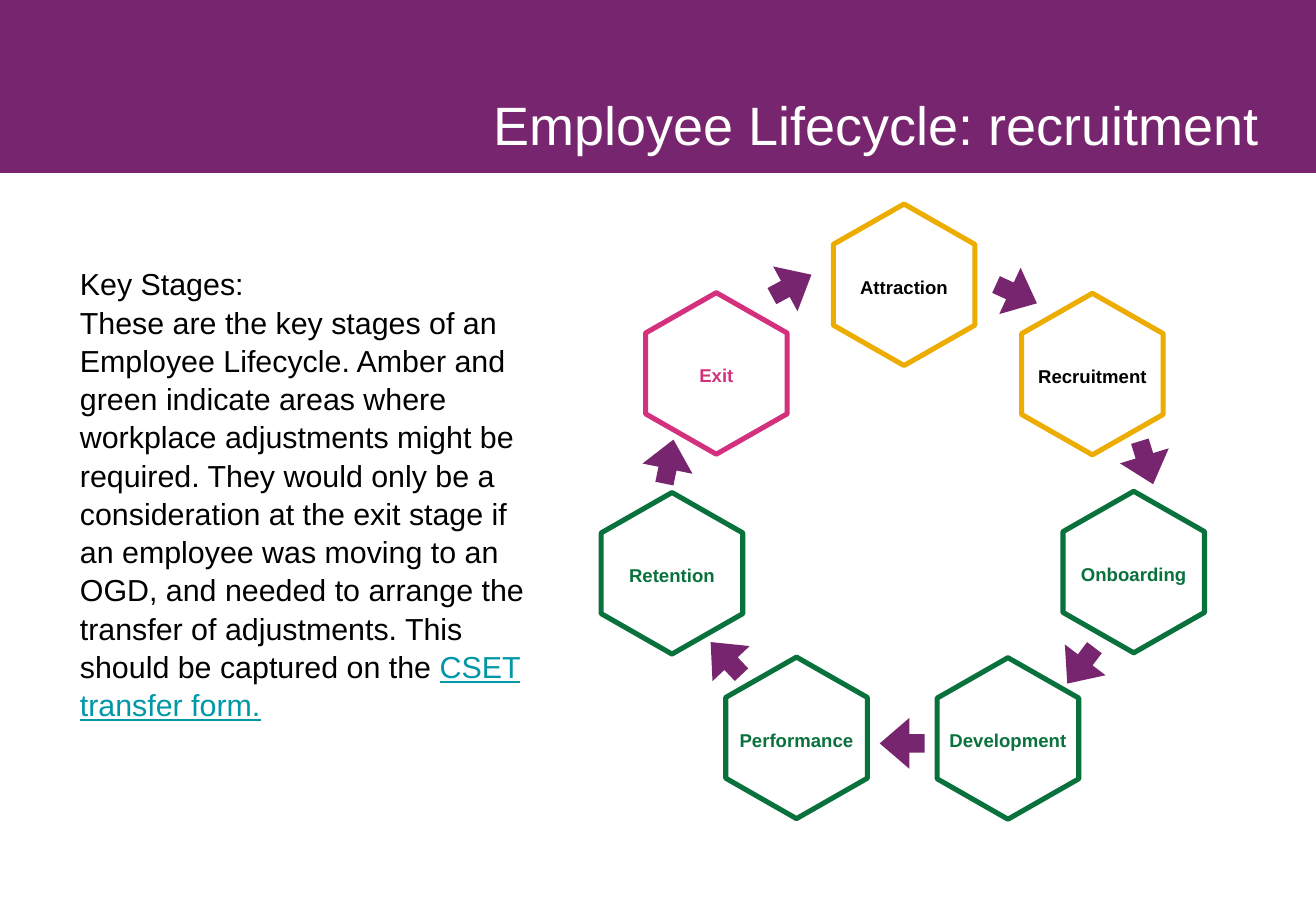
from lxml import etree
from pptx import Presentation
from pptx.dml.color import RGBColor
from pptx.enum.shapes import MSO_SHAPE as Shape
from pptx.enum.text import MSO_ANCHOR as Anchor, PP_ALIGN as Align
from pptx.util import Inches, Pt

PURPLE = RGBColor(0x78, 0x25, 0x6F)
AMBER = RGBColor(0xEC, 0xAC, 0x00)
GREEN = RGBColor(0x09, 0x71, 0x3C)
PINK = RGBColor(0xD3, 0x31, 0x7D)
TEAL = RGBColor(0x00, 0x97, 0xA7)
BLACK = RGBColor(0, 0, 0)
WHITE = RGBColor(0xFF, 0xFF, 0xFF)

SLIDE_SIZE = Inches(10.83), Inches(7.5)
CELL = Inches(0.1)  # grid step of the cycle
HEXAGON = 11.65, 13.3  # columns, rows
ARROW = 3.7, 4.2

# Name, outline, text colour, hexagon centre, arrow centre, arrow rotation
STAGES = [
    ("Attraction", AMBER, BLACK, (24.9, 6.65), (34.15, 7.4), 24.7),
    ("Recruitment", AMBER, BLACK, (40.4, 14), (44.85, 21.3), 72.9),
    ("Onboarding", GREEN, GREEN, (43.8, 30.3), (39.45, 38), 127.1),
    ("Development", GREEN, GREEN, (33.45, 44), (24.75, 44.4), 180),
    ("Performance", GREEN, GREEN, (16.05, 43.95), (10.25, 37.4), 226.6),
    ("Retention", GREEN, GREEN, (5.8, 30.4), (5.55, 21.2), 281.6),
    ("Exit", PINK, PINK, (9.45, 13.95), (15.65, 6.7), 331.5),
]
KEY_STAGES = [
    [("Key Stages:", {})],
    [("These are the key stages of an Employee Lifecycle. Amber and green "
      "indicate areas where workplace adjustments might be required. They "
      "would only be a consideration at the exit stage if an employee was "
      "moving to an OGD, and needed to arrange the transfer of adjustments. "
      "This should be captured on the ", {}),
     ("CSET transfer form.", {"color": TEAL, "underline": True})],
]


def set_attributes(target, values):
    for name, value in values.items():
        setattr(target, name, value)


def paint(shape, fill, line=None, width=3):
    shape.shadow.inherit = False
    shape.fill.solid()
    shape.fill.fore_color.rgb = fill
    if line is None:
        shape.line.fill.background()
    else:
        shape.line.color.rgb = line
        shape.line.width = Pt(width)


def write(shape, paragraphs, margins, anchor=Anchor.TOP, align=Align.LEFT,
          spacing=1.0, **font_format):
    frame = shape.text_frame
    sides = ("margin_left", "margin_top", "margin_right", "margin_bottom")
    set_attributes(frame, dict(zip(sides, map(Inches, margins))))
    set_attributes(frame, {"word_wrap": True, "vertical_anchor": anchor})
    for index, runs in enumerate(paragraphs):
        paragraph = frame.add_paragraph() if index else frame.paragraphs[0]
        set_attributes(paragraph, {"alignment": align, "line_spacing": spacing})
        for text, changes in runs:
            run = paragraph.add_run()
            run.text = text
            values = {"name": "Arial", **font_format, **changes}
            run.font.color.rgb = values.pop("color")
            set_attributes(run.font, values)


def add_header(slide, left, top, width, height):
    band = slide.shapes.add_shape(Shape.RECTANGLE, left, top, width, height)
    paint(band, PURPLE, PURPLE, 0.75)
    title = slide.shapes.add_textbox(left + Inches(0.3), top + height // 2,
                                     width - Inches(0.76), height // 2)
    write(title, [[("Employee Lifecycle: recruitment", {})]], (0, 0.04, 0, 0),
          align=Align.RIGHT, size=Pt(32), color=WHITE)


def add_key_stages(slide, left, top, width, height):
    box = slide.shapes.add_textbox(left, top, width, height)
    write(box, KEY_STAGES, (0.1,) * 4, spacing=1.05, size=Pt(18), color=BLACK)


def add_hexagon(slide, x, y, name, outline, text_color):
    half_width, half_height = (side * CELL / 2 for side in HEXAGON)
    corners = [(x + across * half_width, y + down * half_height)
               for across, down in [(0, -1), (-1, -0.5), (-1, 0.5),
                                    (0, 1), (1, 0.5), (1, -0.5)]]
    builder = slide.shapes.build_freeform(*map(round, corners[0]))
    builder.add_line_segments([tuple(map(round, corner)) for corner in corners[1:]])
    hexagon = builder.convert_to_shape()
    paint(hexagon, WHITE, outline)
    write(hexagon, [[(name, {})]], (0.04,) * 4, Anchor.MIDDLE, Align.CENTER, 1.17,
          size=Pt(11), bold=True, color=text_color)


def add_arrow(slide, x, y, rotation):
    width, height = (round(side * CELL) for side in ARROW)
    arrow = slide.shapes.add_shape(Shape.RIGHT_ARROW, round(x - width / 2),
                                   round(y - height / 2), width, height)
    arrow.rotation = rotation
    arrow.adjustments[0], arrow.adjustments[1] = 0.36, 0.66
    paint(arrow, PURPLE)


def add_cycle(slide, left, top):
    def place(point):
        return left + point[0] * CELL, top + point[1] * CELL

    for name, outline, text_color, centre, arrow_centre, rotation in STAGES:
        add_hexagon(slide, *place(centre), name, outline, text_color)
        add_arrow(slide, *place(arrow_centre), rotation)


def main():
    presentation = Presentation()
    presentation.slide_width, presentation.slide_height = SLIDE_SIZE
    slide = presentation.slides.add_slide(presentation.slide_layouts[6])
    # Title band
    add_header(slide, 0, 0, SLIDE_SIZE[0], Inches(1.42))
    # Explanation on the left
    add_key_stages(slide, Inches(0.56), Inches(2.07), Inches(4), Inches(4.55))
    # Ring of stages on the right
    add_cycle(slide, Inches(4.95), Inches(1.68))
    presentation.save("out.pptx")


if __name__ == "__main__":
    main()
